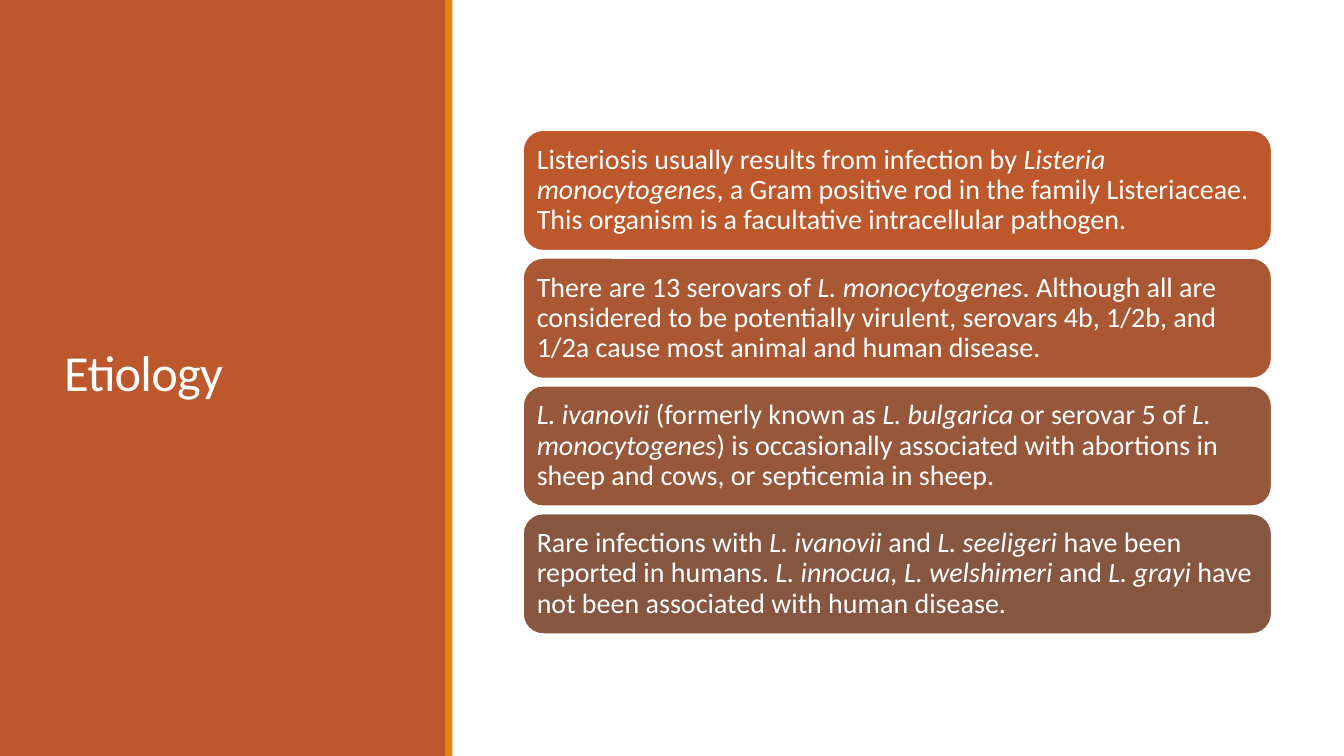
from dataclasses import dataclass

from pptx import Presentation
from pptx.dml.color import RGBColor
from pptx.enum.shapes import MSO_SHAPE as Shape
from pptx.enum.text import MSO_ANCHOR as Anchor, PP_ALIGN as Align
from pptx.util import Cm, Pt


@dataclass(frozen=True)
class Theme:
    font: str = "Calibri"
    title_size: float = 36
    body_size: float = 20
    white: str = "FFFFFF"
    panel: str = "BD582C"
    accent: str = "E48312"
    cards: tuple = ("BD582C", "AA5834", "97573A", "865640")


# Asterisks enclose italic species names.
FACTS = (
    "Listeriosis usually results from infection by *Listeria monocytogenes*, a Gram positive rod "
    "in the family Listeriaceae. This organism is a facultative intracellular pathogen.",
    "There are 13 serovars of *L. monocytogenes*. Although all are considered to be potentially "
    "virulent, serovars 4b, 1/2b, and 1/2a cause most animal and human disease.",
    "*L. ivanovii *(formerly known as *L. bulgarica *or serovar 5 of *L. monocytogenes*) is "
    "occasionally associated with abortions in sheep and cows, or septicemia in sheep.",
    "Rare infections with *L. ivanovii *and *L. seeligeri *have been reported in humans. "
    "*L. innocua, L. welshimeri *and *L. grayi *have not been associated with human disease.",
)


class SlideBuilder:
    def __init__(self, slide, theme):
        self.slide = slide
        self.theme = theme

    def box(self, kind, left, top, width, height, fill):
        shape = self.slide.shapes.add_shape(kind, Cm(left), Cm(top), Cm(width), Cm(height))
        shape.shadow.inherit = False
        shape.fill.solid()
        shape.fill.fore_color.rgb = RGBColor.from_string(fill)
        shape.line.fill.background()
        return shape

    def set_text(self, text_frame, marked_text, size, line_spacing):
        """Fill the frame with one paragraph, italic between asterisks."""
        text_frame.word_wrap = True
        text_frame.vertical_anchor = Anchor.MIDDLE
        paragraph = text_frame.paragraphs[0]
        paragraph.alignment = Align.LEFT
        paragraph.line_spacing = line_spacing
        for index, part in enumerate(marked_text.split("*")):
            if part:
                run = paragraph.add_run()
                run.text = part
                run.font.name = self.theme.font
                run.font.size = Pt(size)
                run.font.italic = index % 2 == 1
                run.font.color.rgb = RGBColor.from_string(self.theme.white)
        return paragraph

    def title(self, text, left, top, width, height):
        shape = self.slide.shapes.add_textbox(Cm(left), Cm(top), Cm(width), Cm(height))
        paragraph = self.set_text(shape.text_frame, text, self.theme.title_size, 0.85)
        for run in paragraph.runs:
            run.font._element.set("spc", "-50")

    def card(self, text, left, top, width, height, fill):
        shape = self.box(Shape.ROUNDED_RECTANGLE, left, top, width, height, fill)
        shape.line.color.rgb = RGBColor.from_string(self.theme.white)
        shape.line.width = Pt(1.25)
        frame = shape.text_frame
        frame.margin_left = frame.margin_right = Cm(0.2)
        frame.margin_top = frame.margin_bottom = Cm(0.2)
        self.set_text(frame, text, self.theme.body_size, 0.9)


def main():
    presentation = Presentation()
    presentation.slide_width = Cm(33.87)
    presentation.slide_height = Cm(19.05)
    theme = Theme()
    builder = SlideBuilder(presentation.slides.add_slide(presentation.slide_layouts[6]), theme)

    builder.box(Shape.RECTANGLE, 0, 0, 11.25, 19.05, theme.panel)
    builder.title("Etiology", 1.37, 1.45, 8.56, 16.03)
    builder.box(Shape.RECTANGLE, 11.22, 0, 0.18, 19.05, theme.accent)

    first_top, pitch = 3.28, 3.22
    for index, (fact, fill) in enumerate(zip(FACTS, theme.cards)):
        builder.card(fact, 13.18, first_top + index * pitch, 18.87, 3.04, fill)

    presentation.save("out.pptx")


if __name__ == "__main__":
    main()
